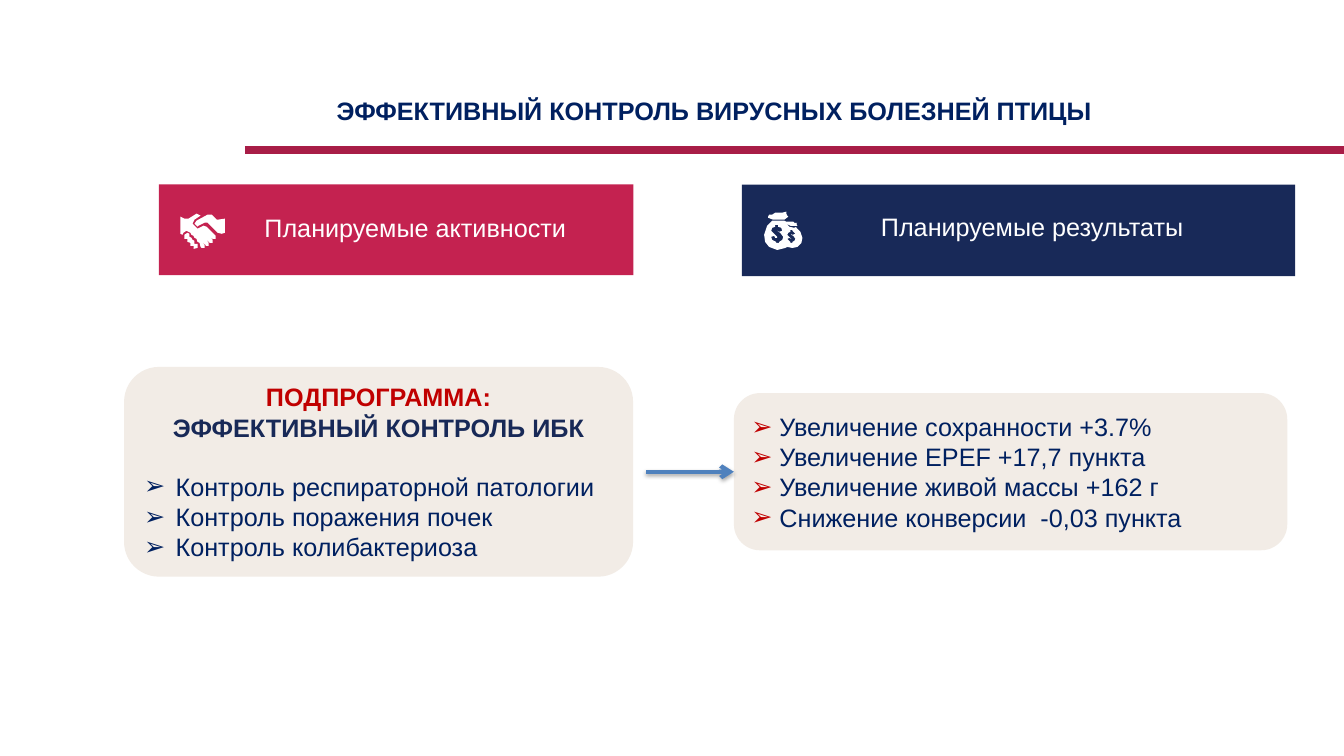
from lxml import etree
from pptx import Presentation
from pptx.dml.color import RGBColor
from pptx.enum.shapes import MSO_CONNECTOR, MSO_SHAPE
from pptx.enum.text import MSO_ANCHOR, MSO_AUTO_SIZE, PP_ALIGN
from pptx.oxml import parse_xml
from pptx.oxml.ns import nsdecls, qn
from pptx.util import Pt

RECT, ROUND = MSO_SHAPE.RECTANGLE, MSO_SHAPE.ROUNDED_RECTANGLE
CENTER, LEFT = PP_ALIGN.CENTER, PP_ALIGN.LEFT
TOP, MIDDLE = MSO_ANCHOR.TOP, MSO_ANCHOR.MIDDLE
STRAIGHT = MSO_CONNECTOR.STRAIGHT
FONT, SIZE = "Arial", 18
SLIDE_W, SLIDE_H = 960, 540

COLORS = {
    "navy": "002060", "heading": "182957", "blue_bar": "182958",
    "pink_bar": "C42250", "rule": "A81D47", "panel": "F2ECE6",
    "red": "C00000", "arrow": "4F81BD", "white": "FFFFFF", "shadow": "000000",
}

# Content
TITLE = "ЭФФЕКТИВНЫЙ КОНТРОЛЬ ВИРУСНЫХ БОЛЕЗНЕЙ ПТИЦЫ"
TITLE_BOX = (240.5, 68.4, 567.4, 21.6)

# Icon outlines, in grid steps of ICON_STEP points
ICON_STEP = 0.72
HANDSHAKE = [
    [(44, 5), (44, 19), (41, 20), (37, 19), (27, 9), (24, 9), (18, 12), (17, 13),
     (14, 10), (16, 7), (27, 1), (31, 1), (36, 6), (37, 6)],
    [(14, 30), (14, 27), (12, 26), (11, 24), (9, 23), (9, 20), (7, 19), (4, 21),
     (4, 25), (7, 25), (7, 28), (10, 29), (10, 32), (13, 32), (13, 35), (17, 34),
     (17, 30)],
    [(35, 22), (26, 13), (23, 12), (19, 14), (17, 15), (12, 10), (14, 6), (20, 2),
     (16, 0), (8, 5), (4, 5), (0, 3), (0, 20), (2, 21), (3, 19), (6, 17), (10, 19),
     (11, 21), (13, 22), (14, 24), (16, 25), (17, 28), (19, 29), (20, 33), (21, 34),
     (24, 34), (24, 31), (21, 28), (25, 31), (25, 32), (28, 32), (28, 29), (25, 25),
     (29, 29), (32, 29), (32, 26), (29, 22), (32, 25), (35, 25)],
]
MONEY_BAGS = [
    # Bags
    [(32, 16), (32, 15), (30, 16), (25, 15), (22, 12), (26, 14), (33, 14), (32, 12),
     (33, 11), (30, 11), (29, 10), (26, 10), (22, 10), (20, 9), (8, 9), (3, 14),
     (0, 23), (1, 30), (5, 35), (13, 38), (21, 36), (23, 35), (28, 36), (33, 35),
     (37, 31), (38, 26), (36, 20)],
    # Currency signs
    [(15, 30), (15, 31), (12, 31), (12, 30), (8, 28), (7, 25), (10, 24), (11, 26),
     (13, 26), (13, 25), (10, 22), (7, 19), (8, 16), (11, 15), (11, 13), (14, 13),
     (14, 15), (17, 16), (18, 19), (15, 20), (13, 19), (16, 21), (19, 25), (18, 28)],
    [(28, 30), (28, 31), (26, 31), (26, 30), (23, 27), (25, 26), (27, 27), (25, 25),
     (23, 23), (24, 21), (26, 20), (26, 18), (28, 18), (28, 19), (31, 22), (28, 23),
     (27, 22), (27, 23), (29, 24), (31, 27), (30, 29)],
    # Knot
    [(9, 8), (13, 8), (20, 8), (24, 5), (23, 4), (22, 2), (22, 0), (18, 1), (11, 1),
     (8, 3), (5, 3), (4, 5), (4, 6)],
]

# Headers: bar box, bar colour, label box, label, icon position, icon outlines
HEADERS = [
    ((113.4, 131.8, 339.1, 64.8), "pink_bar", (158.8, 159.8, 275.8, 10.1),
     "Планируемые активности", (128.9, 152.6), HANDSHAKE),
    ((529.9, 131.8, 395.3, 65.5), "blue_bar", (553.3, 159.1, 367.9, 10.1),
     "Планируемые результаты", (545.8, 151.2), MONEY_BAGS),
]

# Panels: box, headings, bullet lines, bullet indent, bullet colour
PANELS = [
    ((88.6, 262.1, 363.6, 149.8),
     [("ПОДПРОГРАММА:", "red"), ("ЭФФЕКТИВНЫЙ КОНТРОЛЬ ИБК", "heading")],
     ["Контроль респираторной патологии", "Контроль поражения почек",
      "Контроль колибактериоза"], 22.5, "navy"),
    ((524.2, 280.8, 395.3, 112.3), [],
     ["Увеличение сохранности +3.7%", "Увеличение EPEF +17,7 пункта",
      "Увеличение живой массы +162 г", "Снижение конверсии  -0,03 пункта"],
     20, "red"),
]
HEADING_GAP = 20.7
RULE = (175, 107.3, SLIDE_W)      # x1, y, x2
ARROW = (461.5, 337, 524.2)


def rgb(name):
    return RGBColor.from_string(COLORS[name])


def fill_plain(sp, color):
    sp.shadow.inherit = False
    sp.fill.solid()
    sp.fill.fore_color.rgb = rgb(color)
    sp.line.fill.background()


def add_block(s, kind, box, color):
    sp = s.shapes.add_shape(kind, *map(Pt, box))
    fill_plain(sp, color)
    return sp


def set_text(p, text, color, bold=False, align=LEFT):
    p.text = text
    p.alignment = align
    f = p.runs[0].font
    f.name, f.size, f.bold = FONT, Pt(SIZE), bold
    f.color.rgb = rgb(color)


def add_label(s, box, text, color, anchor=TOP, bold=False, align=LEFT):
    tf = s.shapes.add_textbox(*map(Pt, box)).text_frame
    tf.word_wrap = True
    tf.auto_size = MSO_AUTO_SIZE.SHAPE_TO_FIT_TEXT
    tf.vertical_anchor = anchor
    tf.margin_left = tf.margin_right = tf.margin_top = tf.margin_bottom = 0
    p = tf.paragraphs[0]
    set_text(p, text, color, bold, align)
    return p


def add_icon(s, place, outlines):
    fb = s.shapes.build_freeform(*outlines[0][0], scale=Pt(ICON_STEP))
    fb.add_line_segments(outlines[0][1:])
    for outline in outlines[1:]:
        fb.move_to(*outline[0])
        fb.add_line_segments(outline[1:])
    fill_plain(fb.convert_to_shape(*map(Pt, place)), "white")


def add_bullet(p, indent, color):
    pPr = p._p.get_or_add_pPr()
    pPr.set("marL", str(Pt(indent)))
    pPr.set("indent", str(-Pt(indent)))
    clr = etree.SubElement(pPr, qn("a:buClr"))
    etree.SubElement(clr, qn("a:srgbClr"), val=COLORS[color])
    etree.SubElement(pPr, qn("a:buFont"), typeface=FONT)
    etree.SubElement(pPr, qn("a:buChar"), char="➢")


def add_line(s, ends, color, width):
    x1, y, x2 = ends
    c = s.shapes.add_connector(STRAIGHT, Pt(x1), Pt(y), Pt(x2), Pt(y))
    c.line.color.rgb = rgb(color)
    c.line.width = Pt(width)
    effects = etree.SubElement(c._element.spPr, qn("a:effectLst"))
    return c, effects


prs = Presentation()
prs.slide_width, prs.slide_height = Pt(SLIDE_W), Pt(SLIDE_H)
s = prs.slides.add_slide(prs.slide_layouts[6])

# Title and rule
add_line(s, RULE, "rule", 6)
add_label(s, TITLE_BOX, TITLE, "navy", MIDDLE, bold=True)

# Column headers
for bar, color, label_box, label, place, outlines in HEADERS:
    add_block(s, RECT, bar, color)
    p = add_label(s, label_box, label, "white", align=CENTER)
    p.line_spacing, p.space_after = Pt(13.4), Pt(3.1)
    add_icon(s, place, outlines)

# Panels
for box, headings, bullets, indent, bullet_color in PANELS:
    tf = add_block(s, ROUND, box, "panel").text_frame
    tf.word_wrap = True
    tf.vertical_anchor = MIDDLE
    for i in range(len(headings) + len(bullets)):
        p = tf.add_paragraph() if i else tf.paragraphs[0]
        if i < len(headings):
            set_text(p, *headings[i], bold=True, align=CENTER)
            continue
        if headings and i == len(headings):
            p.space_before = Pt(HEADING_GAP)
        add_bullet(p, indent, bullet_color)
        set_text(p, bullets[i - len(headings)], "navy")

# Arrow with a soft shadow
arrow, effects = add_line(s, ARROW, "arrow", 3)
etree.SubElement(arrow.line._get_or_add_ln(), qn("a:tailEnd"), type="arrow")
effects.append(parse_xml(
    f'<a:outerShdw {nsdecls("a")} blurRad="{Pt(3.1)}" dist="{Pt(1.8)}" dir="5400000" '
    f'rotWithShape="0"><a:srgbClr val="{COLORS["shadow"]}"><a:alpha val="35000"/>'
    '</a:srgbClr></a:outerShdw>'))

prs.save("out.pptx")
